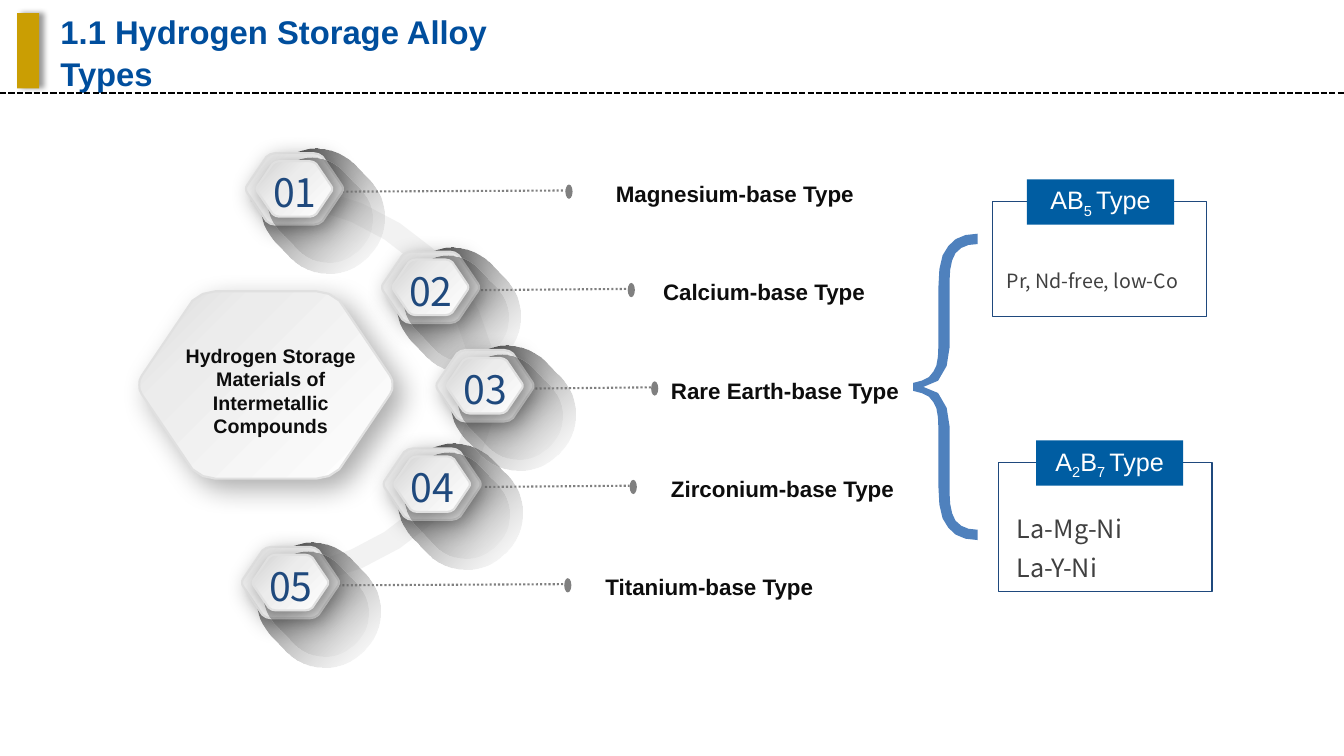
from dataclasses import dataclass
from typing import NamedTuple

from pptx import Presentation
from pptx import util as u
from pptx.dml.color import RGBColor
from pptx.enum import dml, shapes, text
from pptx.oxml import parse_xml
from pptx.oxml.ns import nsdecls, qn


@dataclass(frozen=True)
class Theme:
    sans: str = "Arial"
    noto: str = "Noto Sans CJK SC"
    title: str = "004E9D"
    gold: str = "CA9E03"
    black: str = "000000"
    ink: str = "0D0D0D"
    body: str = "404040"
    navy: str = "1F497D"
    header: str = "005DA2"
    brace: str = "4F81BD"
    white: str = "FFFFFF"
    band: str = "F2F2F2"
    grey: str = "808080"
    rim: str = "E0E0E0"
    title_size: float = 23.4
    number_size: float = 28
    card_size: float = 18
    label_size: float = 16
    small_size: float = 14


class Stop(NamedTuple):
    position: int
    color: str
    alpha: int = 100


class Shadow(NamedTuple):
    alpha: int
    blur: float
    distance: float
    angle: int


class Style(NamedTuple):
    font: str
    size: float
    color: str
    bold: bool = False
    align: text.PP_ALIGN = text.PP_ALIGN.LEFT
    spacing: float | None = None


class Span(NamedTuple):
    words: str
    subscript: bool = False


@dataclass(frozen=True)
class AlloyType:
    label: str
    badge_left: float
    line_start: float
    dot_left: float
    label_left: float
    label_width: float


@dataclass(frozen=True)
class Card:
    heading: tuple[Span, ...]
    lines: tuple[str, ...]
    size: float
    frame: tuple[float, float, float, float]
    header_left: float
    text_area: tuple[float, float, float, float]


THEME = Theme()
CENTER = text.PP_ALIGN.CENTER
PLATE = (Stop(0, "FFFFFF"), Stop(73, "ECECEC"), Stop(100, "D9D9D9"))
INNER_PLATE = (Stop(0, "FFFFFF"), Stop(60, "ECECEC"), Stop(100, "D1D1D1"))
FIRST_TOP, ROW_STEP = 3.86, 2.48

# Upper halves of outlines: a pair is a corner, six numbers are a Bézier curve.
HEXAGON = [(0, .5), (0, .48, 0, .47, .01, .45), (.21, .05), (.23, .02, .27, 0, .3, 0), (.7, 0),
           (.73, 0, .77, .02, .79, .05), (.99, .45), (1, .47, 1, .48, 1, .5)]
ARC = [(12.5, 9.72), (12.5, 7.04, 10.06, 4.85, 6.96, 4.6), (6.32, 4.57), (6.32, 5.08),
       (6.88, 5.11), (9.68, 5.33, 11.86, 7.32, 11.86, 9.72)]
BRACE = [(23.01, 9.75), (23.01, 9.65), (23.27, 9.6, 23.44, 9.53, 23.52, 9.37),
         (23.62, 9.25, 23.65, 9.02, 23.65, 8.69), (23.65, 7.24),
         (23.65, 6.73, 23.72, 6.38, 23.9, 6.2), (24.05, 5.99, 24.31, 5.89, 24.64, 5.89),
         (24.64, 6.15), (24.38, 6.15, 24.21, 6.22, 24.08, 6.38),
         (23.98, 6.53, 23.93, 6.78, 23.93, 7.09), (23.93, 8.76),
         (23.93, 9.22, 23.72, 9.75, 23.27, 9.75)]

ALLOYS = [
    AlloyType("Magnesium-base Type", 6.2, 8.41, 14.25, 15.27, 7.19),
    AlloyType("Calcium-base Type", 9.63, 12.12, 15.82, 16.46, 6.1),
    AlloyType("Rare Earth-base Type", 11, 13.49, 16.41, 16.66, 6.58),
    AlloyType("Zirconium-base Type", 9.67, 12.22, 15.87, 16.66, 6.58),
    AlloyType("Titanium-base Type", 6.1, 8.31, 14.22, 15.01, 6.1),
]
CARDS = [
    Card((Span("AB"), Span("5 ", True), Span("Type")), ("Pr, Nd-free, low-Co",),
         THEME.small_size, (25.02, 5.08, 5.38, 2.9), 25.88, (25.17, 6.5, 5.08, .89)),
    Card((Span("A"), Span("2", True), Span("B"), Span("7 ", True), Span("Type")),
         ("La-Mg-Ni", "La-Y-Ni"), THEME.card_size, (25.17, 11.66, 5.38, 3.25), 26.11,
         (25.43, 12.6, 4.8, 1.75)),
]


def finish(shape, fill: str | None = None, line: str | None = None, width: float = 1) -> None:
    shape.shadow.inherit = False
    if fill:
        shape.fill.solid()
        shape.fill.fore_color.rgb = RGBColor.from_string(fill)
    else:
        shape.fill.background()
    if line:
        shape.line.color.rgb = RGBColor.from_string(line)
        shape.line.width = u.Pt(width)
    else:
        shape.line.fill.background()


def set_gradient(shape, stops: tuple[Stop, ...], angle: int) -> None:
    marks = "".join(
        f'<a:gs pos="{s.position * 1000}"><a:srgbClr val="{s.color}">'
        f'<a:alpha val="{s.alpha * 1000}"/></a:srgbClr></a:gs>' for s in stops)
    gradient = parse_xml(f'<a:gradFill {nsdecls("a")} rotWithShape="1"><a:gsLst>{marks}</a:gsLst>'
                         f'<a:lin ang="{angle * 60000}" scaled="0"/></a:gradFill>')
    properties = shape._element.spPr
    properties.replace(properties.find(qn("a:noFill")), gradient)


def set_shadow(shape, shadow: Shadow) -> None:
    effects = shape._element.spPr.find(qn("a:effectLst"))
    effects.append(parse_xml(
        f'<a:outerShdw {nsdecls("a")} blurRad="{u.Pt(shadow.blur)}" dist="{u.Pt(shadow.distance)}" '
        f'dir="{shadow.angle * 60000}" algn="ctr" rotWithShape="0"><a:srgbClr val="{THEME.black}">'
        f'<a:alpha val="{shadow.alpha * 1000}"/></a:srgbClr></a:outerShdw>'))


def add_preset(page, kind, area: tuple[float, ...], fill=None, line=None):
    shape = page.shapes.add_shape(kind, *map(u.Cm, area))
    finish(shape, fill, line)
    return shape


def add_outline(page, half: list[tuple], steps: int, left=0.0, top=0.0, width=1.0, height=1.0):
    """Draw a half outline and its mirror image below, each curve as some straight steps."""
    points = [half[0]]
    for piece in half[1:]:
        if len(piece) == 2:
            points.append(piece)
            continue
        knots = (points[-1], piece[:2], piece[2:4], piece[4:])
        for t in (step / steps for step in range(1, steps + 1)):
            weights = ((1 - t) ** 3, 3 * t * (1 - t) ** 2, 3 * t * t * (1 - t), t ** 3)
            points.append(tuple(sum(w * k[axis] for w, k in zip(weights, knots)) for axis in (0, 1)))
    axis_y = half[0][1]
    points += [(x, 2 * axis_y - y) for x, y in points[-2:0:-1]]
    placed = [(u.Cm(left + x * width), u.Cm(top + y * height)) for x, y in points]
    builder = page.shapes.build_freeform(*placed[0])
    builder.add_line_segments(placed[1:], close=True)
    return builder.convert_to_shape()


def add_hexagon(page, area: tuple[float, ...], stops: tuple[Stop, ...], shadow: Shadow) -> None:
    plate = add_outline(page, HEXAGON, 2, *area)
    finish(plate, line=THEME.rim, width=1.5)
    plate.rotation = 180
    set_gradient(plate, stops, 45)
    set_shadow(plate, shadow)


def add_line(page, start: tuple[float, float], end: tuple[float, float], color: str, dash) -> None:
    line = page.shapes.add_connector(shapes.MSO_CONNECTOR.STRAIGHT, *map(u.Cm, start + end))
    line.line.color.rgb = RGBColor.from_string(color)
    line.line.width = u.Pt(1.5)
    line.line.dash_style = dash
    line._element.spPr.append(parse_xml(f'<a:effectLst {nsdecls("a")}/>'))


def write(frame, lines: list[tuple[Span, ...]], style: Style) -> None:
    frame.word_wrap = True
    for index, spans in enumerate(lines):
        para = frame.add_paragraph() if index else frame.paragraphs[0]
        para.alignment = style.align
        if style.spacing:
            para.line_spacing = style.spacing
        for words, subscript in spans:
            span = para.add_run()
            span.text = words
            span.font.name, span.font.size, span.font.bold = style.font, u.Pt(style.size), style.bold
            span.font.color.rgb = RGBColor.from_string(style.color)
            if subscript:
                span.font._element.set("baseline", "-25000")


def set_margins(frame) -> None:
    frame.margin_left = frame.margin_right = u.Cm(.2)
    frame.margin_top = frame.margin_bottom = u.Cm(.1)


def add_text(page, area: tuple[float, ...], lines: tuple[str, ...], style: Style):
    box = page.shapes.add_textbox(*map(u.Cm, area))
    write(box.text_frame, [(Span(line),) for line in lines], style)
    box.text_frame.auto_size = text.MSO_AUTO_SIZE.SHAPE_TO_FIT_TEXT
    return box


def add_badge(page, left: float, top: float, number: int) -> None:
    def add_cast(area: tuple[float, ...], alpha: int) -> None:
        cast = add_preset(page, shapes.MSO_SHAPE.ROUNDED_RECTANGLE, area)
        cast.adjustments[0] = .48
        cast.rotation = 46
        set_gradient(cast, (Stop(0, THEME.black, alpha), Stop(100, "E8E8E8", 0)), 0)

    add_cast((left + .31, top + .07, 3.23, 2.79), 100)
    add_hexagon(page, (left, top, 2.44, 1.8), PLATE, Shadow(32, 16, 5, 45))
    add_cast((left + .46, top + .35, 2.79, 2.18), 66)
    add_hexagon(page, (left + .27, top + .2, 1.9, 1.4), INNER_PLATE, Shadow(33, 12, 3, 45))
    add_text(page, (left - .08, top + .26, 2.62, 1.45), (f"{number:02}",),
             Style(THEME.noto, THEME.number_size, THEME.navy, align=CENTER))


def add_card(page, card: Card) -> None:
    rectangle = shapes.MSO_SHAPE.RECTANGLE
    add_preset(page, rectangle, card.frame, line=THEME.navy)
    header = add_preset(page, rectangle, (card.header_left, card.frame[1] - .56, 3.71, 1.14), THEME.header)
    set_margins(header.text_frame)
    header.text_frame.vertical_anchor = text.MSO_ANCHOR.MIDDLE
    write(header.text_frame, [card.heading], Style(THEME.sans, THEME.card_size, THEME.white, align=CENTER))
    box = add_text(page, card.text_area, card.lines, Style(THEME.noto, card.size, THEME.body, spacing=1.3))
    set_margins(box.text_frame)


def add_heading(page) -> None:
    add_line(page, (0, 2.34), (33.87, 2.34), THEME.black, dml.MSO_LINE.SQUARE_DOT)
    bar = add_preset(page, shapes.MSO_SHAPE.RECTANGLE, (.43, .33, .56, 1.9), THEME.gold)
    set_shadow(bar, Shadow(40, 4, 3, 0))
    title = page.shapes.title
    title.left, title.top, title.width, title.height = map(u.Cm, (1.27, .56, 13.79, 1.45))
    title.text_frame.auto_size = text.MSO_AUTO_SIZE.NONE
    title.text_frame.vertical_anchor = text.MSO_ANCHOR.MIDDLE
    write(title.text_frame, [(Span("1.1 Hydrogen Storage Alloy Types"),)],
          Style(THEME.sans, THEME.title_size, THEME.title, True, spacing=1.06))


def main() -> None:
    deck = Presentation()
    deck.slide_width, deck.slide_height = u.Cm(33.87), u.Cm(19.05)
    page = deck.slides.add_slide(deck.slide_layouts[5])
    add_heading(page)

    tops = [FIRST_TOP + ROW_STEP * row for row in range(len(ALLOYS))]
    for alloy, top in zip(ALLOYS, tops):
        add_line(page, (alloy.line_start, top + .97), (alloy.dot_left, top + .94),
                 THEME.grey, dml.MSO_LINE.ROUND_DOT)
        add_preset(page, shapes.MSO_SHAPE.OVAL, (alloy.dot_left, top + .79, .18, .36), THEME.grey)
    finish(add_outline(page, ARC, 8), THEME.band)
    for row in (0, 4, 3, 1, 2):
        add_badge(page, ALLOYS[row].badge_left, tops[row], row + 1)

    add_hexagon(page, (3.51, 7.34, 6.38, 4.72), PLATE, Shadow(32, 20, 9, 45))
    add_text(page, (4.27, 8.53, 5.11, 2.64), ("Hydrogen Storage Materials of Intermetallic Compounds",),
             Style(THEME.sans, THEME.small_size, THEME.ink, True, CENTER))
    for alloy, top in zip(ALLOYS, tops):
        add_text(page, (alloy.label_left, top + .55, alloy.label_width, .94), (alloy.label,),
                 Style(THEME.sans, THEME.label_size, THEME.ink, True))

    finish(add_outline(page, BRACE, 3), THEME.brace)
    for card in CARDS:
        add_card(page, card)
    deck.save("out.pptx")


if __name__ == "__main__":
    main()
